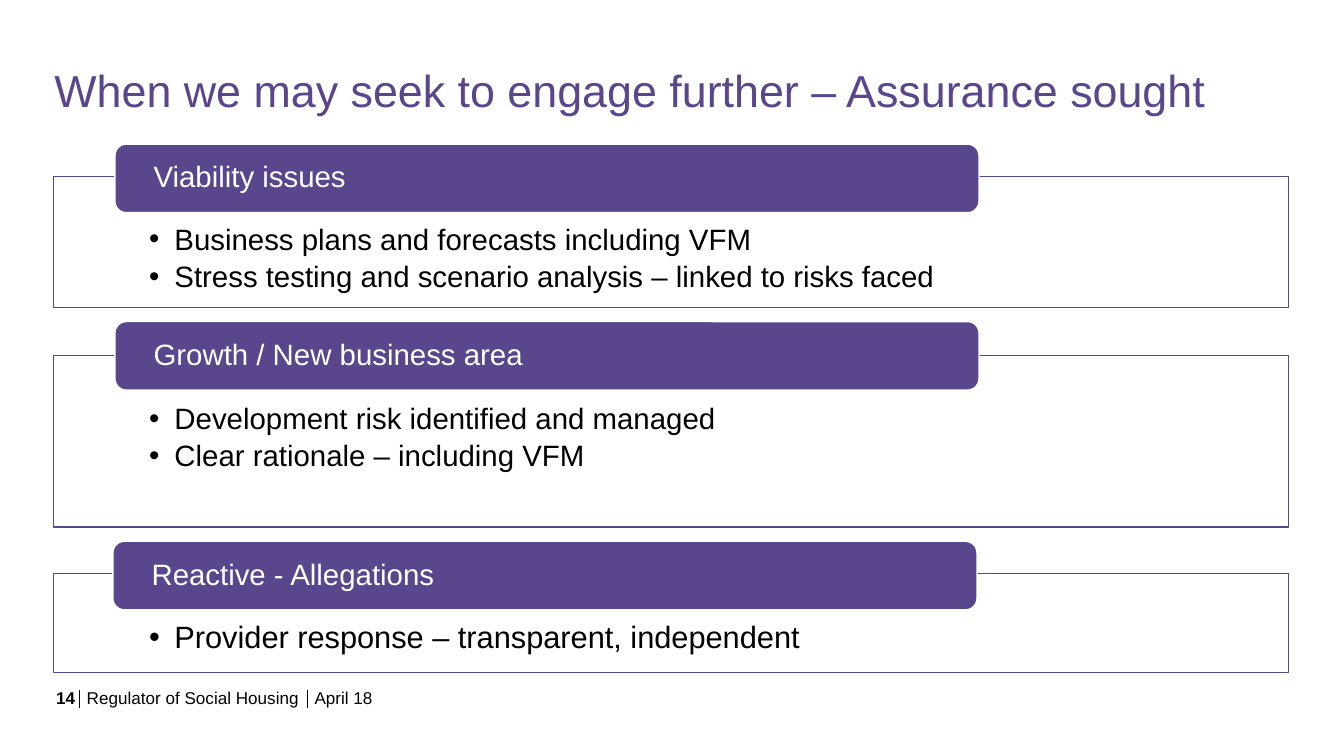
from dataclasses import dataclass

from pptx import Presentation
from pptx.dml.color import RGBColor
from pptx.enum.shapes import MSO_CONNECTOR, MSO_SHAPE
from pptx.enum.text import MSO_ANCHOR, PP_ALIGN
from pptx.oxml.ns import qn
from pptx.util import Inches, Pt
from lxml.etree import SubElement

# Content
TITLE = "When we may seek to engage further – Assurance sought"
# heading, heading left and top, box top and height, bullet size, bullets
SECTIONS = [
    ("Viability issues", 1.14, 1.43, 1.75, 1.3, 21,
     ["Business plans and forecasts including VFM",
      "Stress testing and scenario analysis – linked to risks faced"]),
    ("Growth / New business area", 1.14, 3.19, 3.53, 1.7, 21,
     ["Development risk identified and managed",
      "Clear rationale – including VFM"]),
    ("Reactive - Allegations", 1.12, 5.37, 5.69, 0.98, 22,
     ["Provider response – transparent, independent"]),
]
# text, left, width, bold, alignment
FOOTER = [
    ("14", 0.54, 0.22, True, PP_ALIGN.CENTER),
    ("Regulator of Social Housing", 0.86, 2.12, False, PP_ALIGN.LEFT),
    ("April 18", 3.12, 3, False, PP_ALIGN.LEFT),
]
FOOTER_DIVIDERS = [0.79, 3.05]


@dataclass(frozen=True)
class Theme:
    font: str = "Arial"
    purple: RGBColor = RGBColor(0x59, 0x46, 0x8D)
    white: RGBColor = RGBColor(0xFF, 0xFF, 0xFF)
    black: RGBColor = RGBColor(0, 0, 0)
    title_size: float = 32
    heading_size: float = 21
    footer_size: float = 12.2


THEME = Theme()


def set_frame(frame, anchor, left=0, top=0, right=0, bottom=0):
    frame.word_wrap = True
    frame.vertical_anchor = anchor
    frame.margin_left, frame.margin_right = Inches(left), Inches(right)
    frame.margin_top, frame.margin_bottom = Inches(top), Inches(bottom)


def write(paragraph, text, size, color, bold=False, align=PP_ALIGN.LEFT):
    paragraph.alignment = align
    run = paragraph.add_run()
    run.text = text
    run.font.name = THEME.font
    run.font.size = Pt(size)
    run.font.bold = bold
    run.font.color.rgb = color


def add_bullet(paragraph):
    properties = paragraph._p.get_or_add_pPr()
    properties.set("marL", str(Inches(0.25)))
    properties.set("indent", str(-Inches(0.25)))
    SubElement(properties, qn("a:buFont")).set("typeface", THEME.font)
    SubElement(properties, qn("a:buChar")).set("char", "•")


def add_panel(slide, kind, left, top, width, height, fill, line):
    shape = slide.shapes.add_shape(
        kind, Inches(left), Inches(top), Inches(width), Inches(height))
    shape.shadow.inherit = False
    shape.fill.solid()
    shape.fill.fore_color.rgb = fill
    shape.line.color.rgb = line
    shape.line.width = Pt(1)
    return shape


def add_section(slide, heading, left, top, box_top, box_height, size, bullets):
    # Outlined box with bullets
    box = add_panel(slide, MSO_SHAPE.RECTANGLE, 0.53, box_top, 12.25,
                    box_height, THEME.white, THEME.purple)
    frame = box.text_frame
    set_frame(frame, MSO_ANCHOR.TOP, 0.95, 0.48, 0.95, 0.16)
    for index, bullet in enumerate(bullets):
        paragraph = frame.add_paragraph() if index else frame.paragraphs[0]
        paragraph.line_spacing = 0.9
        paragraph.space_after = Pt(4)
        add_bullet(paragraph)
        write(paragraph, bullet, size, THEME.black)

    # Heading tab over the box's top edge
    tab = add_panel(slide, MSO_SHAPE.ROUNDED_RECTANGLE, left, top, 8.57, 0.68,
                    THEME.purple, THEME.white)
    set_frame(tab.text_frame, MSO_ANCHOR.MIDDLE, 0.35, 0, 0.35, 0)
    paragraph = tab.text_frame.paragraphs[0]
    paragraph.line_spacing = 0.9
    write(paragraph, heading, THEME.heading_size, THEME.white)


def add_footer(slide):
    for left in FOOTER_DIVIDERS:
        divider = slide.shapes.add_connector(
            MSO_CONNECTOR.STRAIGHT,
            Inches(left), Inches(6.85), Inches(left), Inches(7.02))
        divider.line.color.rgb = THEME.black
        divider.line.width = Pt(1)
        SubElement(divider._element.spPr, qn("a:effectLst"))
    for text, left, width, bold, align in FOOTER:
        box = slide.shapes.add_textbox(
            Inches(left), Inches(6.82), Inches(width), Inches(0.2))
        set_frame(box.text_frame, MSO_ANCHOR.MIDDLE)
        write(box.text_frame.paragraphs[0], text, THEME.footer_size,
              THEME.black, bold, align)


def main():
    presentation = Presentation()
    presentation.slide_width = Inches(13.33)
    presentation.slide_height = Inches(7.5)
    slide = presentation.slides.add_slide(presentation.slide_layouts[5])

    # Title
    title = slide.shapes.title
    title.left, title.top = Inches(0.54), Inches(0.68)
    title.width, title.height = Inches(12.25), Inches(1.03)
    set_frame(title.text_frame, MSO_ANCHOR.TOP)
    paragraph = title.text_frame.paragraphs[0]
    paragraph.line_spacing = 0.9
    write(paragraph, TITLE, THEME.title_size, THEME.purple)

    for section in SECTIONS:
        add_section(slide, *section)
    add_footer(slide)
    presentation.save("out.pptx")


if __name__ == "__main__":
    main()
